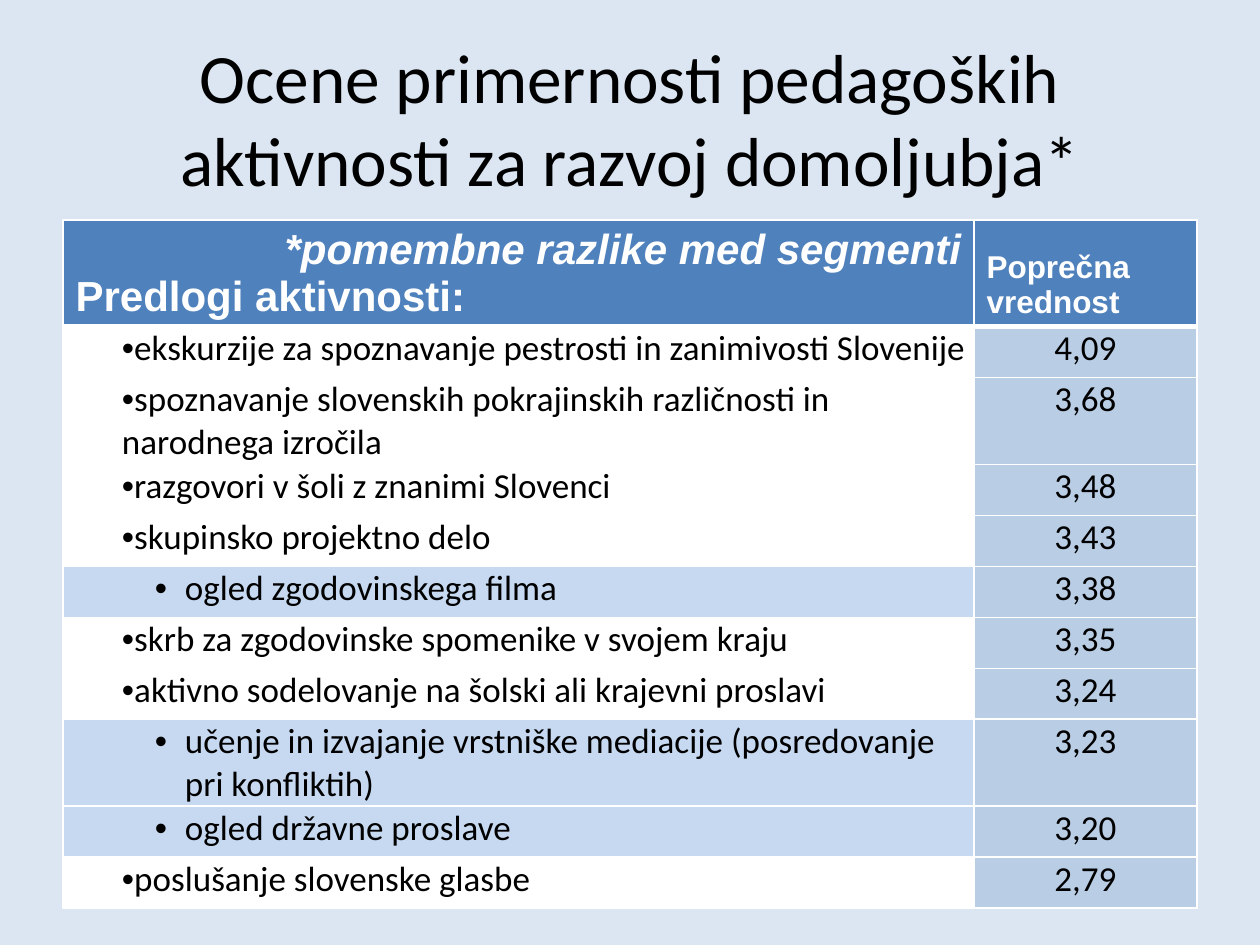
from lxml import etree
from pptx import Presentation
from pptx.dml.color import RGBColor
from pptx.enum.text import MSO_ANCHOR, PP_ALIGN
from pptx.oxml.ns import qn
from pptx.util import Pt

EMU_PER_PX = 914400 / 126
LEFT, CENTER, RIGHT = PP_ALIGN.LEFT, PP_ALIGN.CENTER, PP_ALIGN.RIGHT
TOP, MIDDLE, BOTTOM = MSO_ANCHOR.TOP, MSO_ANCHOR.MIDDLE, MSO_ANCHOR.BOTTOM
WHITE, BLACK, HEADER = "FFFFFF", "000000", "4F81BD"
VALUE, SEGMENT = "B9CDE5", "C6D9F1"


def px(n):
    return round(n * EMU_PER_PX)


def style(p, size, font, color, align=LEFT, bold=False, italic=False):
    p.alignment = align
    for r in p.runs:
        r.font.size = Pt(size)
        r.font.name = font
        r.font.color.rgb = RGBColor.from_string(color)
        r.font.bold = bold
        r.font.italic = italic


activities = [
    ("ekskurzije za spoznavanje pestrosti in zanimivosti Slovenije", "4,09", 0, 51),
    ("spoznavanje slovenskih pokrajinskih različnosti in narodnega izročila", "3,68", 0, 87),
    ("razgovori v šoli z znanimi Slovenci", "3,48", 0, 51),
    ("skupinsko projektno delo", "3,43", 0, 51),
    ("ogled zgodovinskega filma", "3,38", 1, 51),
    ("skrb za zgodovinske spomenike v svojem kraju", "3,35", 0, 51),
    ("aktivno sodelovanje na šolski ali krajevni proslavi", "3,24", 0, 51),
    ("učenje in izvajanje vrstniške mediacije (posredovanje pri konfliktih)", "3,23", 1, 87),
    ("ogled državne proslave", "3,20", 1, 51),
    ("poslušanje slovenske glasbe", "2,79", 0, 51),
]

prs = Presentation()
prs.slide_width, prs.slide_height = px(1260), px(945)
s = prs.slides.add_slide(prs.slide_layouts[5])
s.background.fill.solid()
s.background.fill.fore_color.rgb = RGBColor.from_string("DCE6F2")

title = s.shapes.title
title.left, title.top, title.width, title.height = px(63), px(38), px(1134), px(158)
title.text_frame.text = "Ocene primernosti pedagoških aktivnosti za razvoj domoljubja*"
title.text_frame.vertical_anchor = MIDDLE
style(title.text_frame.paragraphs[0], 39.6, "Calibri", BLACK, CENTER)

heights = [105] + [row[3] for row in activities]
table = s.shapes.add_table(
    len(heights), 2, px(63), px(220), px(1134), px(sum(heights))
).table
table.columns[0].width, table.columns[1].width = px(911), px(223)
for row, height in zip(table.rows, heights):
    row.height = px(height)

for i, row in enumerate(table.rows):
    for cell in row.cells:
        tcPr = cell._tc.get_or_add_tcPr()
        for side in ("lnL", "lnR", "lnT", "lnB"):
            thick = (i == 0 and side == "lnB") or (i == 1 and side == "lnT")
            ln = etree.SubElement(tcPr, qn("a:" + side), w=str(Pt(3 if thick else 1)))
            fill = etree.SubElement(ln, qn("a:solidFill"))
            etree.SubElement(fill, qn("a:srgbClr"), val=WHITE)
        cell.fill.solid()
        cell.fill.fore_color.rgb = RGBColor.from_string(HEADER if i == 0 else VALUE)

head, head_value = table.rows[0].cells
head.text_frame.text = "*pomembne razlike med segmenti\nPredlogi aktivnosti:"
note, heading = head.text_frame.paragraphs
style(note, 24, "Arial", WHITE, RIGHT, bold=True, italic=True)
style(heading, 24, "Arial", WHITE, bold=True)
head_value.text_frame.text = "Poprečna vrednost"
head_value.vertical_anchor = BOTTOM
style(head_value.text_frame.paragraphs[0], 18, "Arial", WHITE, bold=True)

for i, (activity, value, level, height) in enumerate(activities, 1):
    name_cell, value_cell = table.rows[i].cells
    for cell, text, align in ((name_cell, activity, LEFT), (value_cell, value, CENTER)):
        cell.margin_left = cell.margin_right = cell.margin_top = px(1)
        cell.margin_bottom = 0
        cell.vertical_anchor = TOP
        cell.text_frame.text = text
        style(cell.text_frame.paragraphs[0], 20, "Calibri", BLACK, align)
    name_cell.margin_left = px(59)
    name_cell.fill.fore_color.rgb = RGBColor.from_string(SEGMENT if level else WHITE)
    p = name_cell.text_frame.paragraphs[0]
    p.level = level
    pPr = p._p.get_or_add_pPr()
    pPr.set("marL", str(px(63 * level)))
    pPr.set("indent", str(px(-30 * level)))
    etree.SubElement(pPr, qn("a:buFont"), typeface="Arial")
    etree.SubElement(pPr, qn("a:buChar"), char="•")

prs.save("out.pptx")
